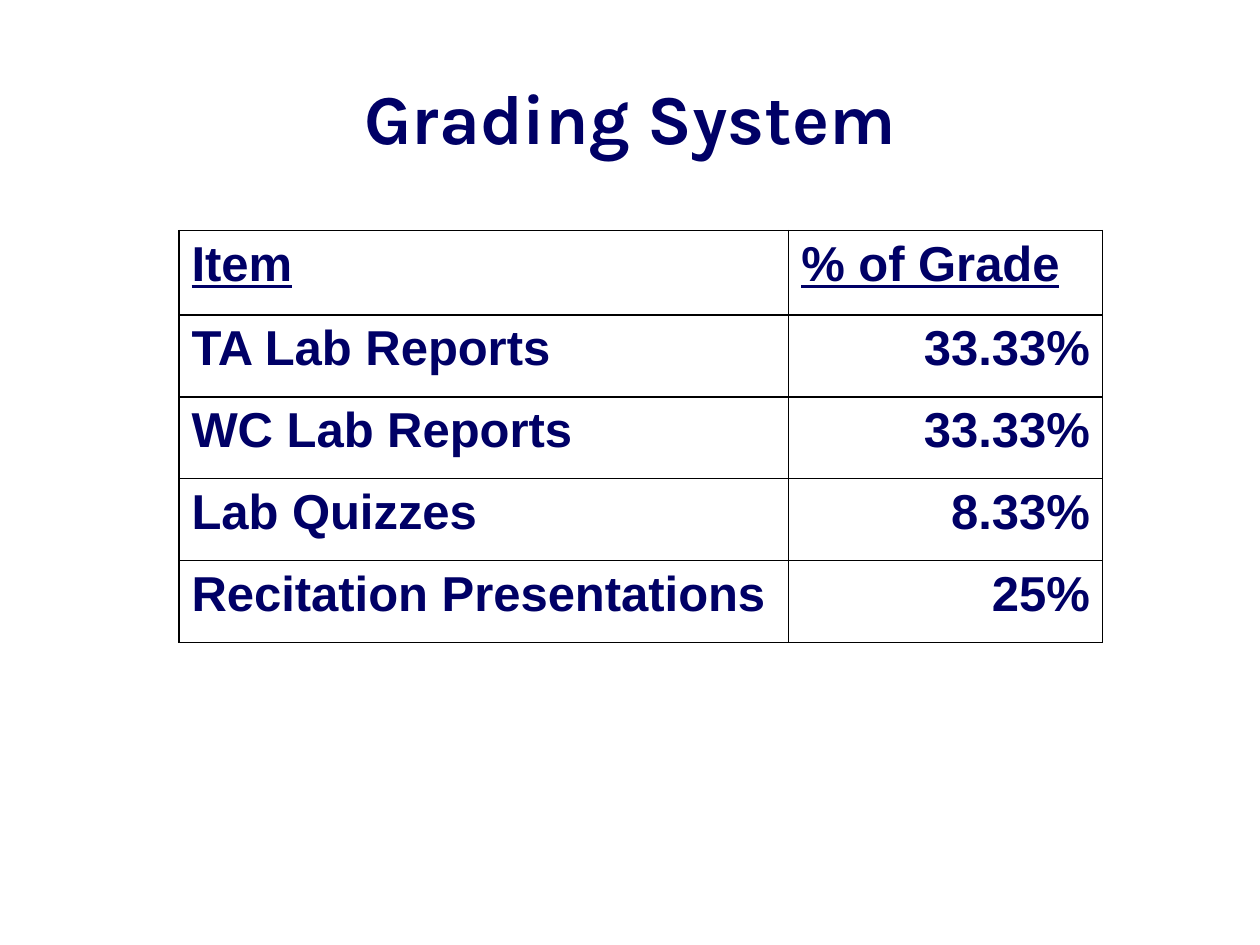
from dataclasses import dataclass

from lxml import etree
from pptx import Presentation
from pptx.dml.color import RGBColor
from pptx.enum.text import MSO_ANCHOR, PP_ALIGN
from pptx.oxml.ns import qn
from pptx.util import Inches, Pt

NAVY = "000066"
BLACK = "000000"
HANGING_INDENT = Inches(0.38)
COLUMN_WIDTHS = (4.84, 2.49)
HEADER_HEIGHT, ITEM_HEIGHT = 0.67, 0.65


@dataclass(frozen=True)
class GradeRow:
    item: str
    share: str
    is_header: bool = False


GRADES = (
    GradeRow("Item", "% of Grade", is_header=True),
    GradeRow("TA Lab Reports", "33.33%"),
    GradeRow("WC Lab Reports", "33.33%"),
    GradeRow("Lab Quizzes", "8.33%"),
    GradeRow("Recitation Presentations", "25%"),
)


def color(hex_value: str) -> RGBColor:
    return RGBColor.from_string(hex_value)


def style_font(paragraph, name: str, size: int, underline: bool = False) -> None:
    font = paragraph.font
    font.name, font.size, font.bold = name, Pt(size), True
    font.underline = underline
    font.color.rgb = color(NAVY)


def add_borders(cell) -> None:
    """Draw a 1 pt line on each side; the lines must precede the cell's fill."""
    properties = cell._tc.get_or_add_tcPr()
    for position, side in enumerate(("lnL", "lnR", "lnT", "lnB")):
        line = etree.Element(qn(f"a:{side}"), w=str(Pt(1)))
        fill = etree.SubElement(line, qn("a:solidFill"))
        etree.SubElement(fill, qn("a:srgbClr"), val=BLACK)
        properties.insert(position, line)


def fill_cell(cell, text: str, alignment: PP_ALIGN, underline: bool) -> None:
    cell.fill.background()
    add_borders(cell)
    cell.text = text
    paragraph = cell.text_frame.paragraphs[0]
    paragraph.alignment = alignment
    layout = paragraph._p.get_or_add_pPr()
    layout.set("marL", str(HANGING_INDENT))
    layout.set("indent", str(-HANGING_INDENT))
    style_font(paragraph, "Arial", 28, underline)


def add_title(slide, text: str) -> None:
    frame = slide.shapes.add_textbox(
        Inches(0.5), Inches(0.3), Inches(9), Inches(1.25)
    ).text_frame
    frame.word_wrap = True
    frame.vertical_anchor = MSO_ANCHOR.MIDDLE
    frame.text = text
    heading = frame.paragraphs[0]
    heading.alignment = PP_ALIGN.CENTER
    style_font(heading, "Karla", 40)


def add_grade_table(slide, grades: tuple[GradeRow, ...]) -> None:
    heights = [HEADER_HEIGHT if g.is_header else ITEM_HEIGHT for g in grades]
    table = slide.shapes.add_table(
        len(grades), len(COLUMN_WIDTHS), Inches(1.42), Inches(1.83),
        Inches(sum(COLUMN_WIDTHS)), Inches(sum(heights)),
    ).table
    table.first_row = table.horz_banding = False
    for column, width in zip(table.columns, COLUMN_WIDTHS):
        column.width = Inches(width)
    for row, height, grade in zip(table.rows, heights, grades):
        row.height = Inches(height)
        item, share = row.cells
        share_alignment = PP_ALIGN.LEFT if grade.is_header else PP_ALIGN.RIGHT
        fill_cell(item, grade.item, PP_ALIGN.LEFT, grade.is_header)
        fill_cell(share, grade.share, share_alignment, grade.is_header)


def main() -> None:
    deck = Presentation()
    deck.slide_width, deck.slide_height = Inches(10), Inches(7.5)
    slide = deck.slides.add_slide(deck.slide_layouts[6])
    add_title(slide, "Grading System")
    add_grade_table(slide, GRADES)
    deck.save("out.pptx")


if __name__ == "__main__":
    main()
